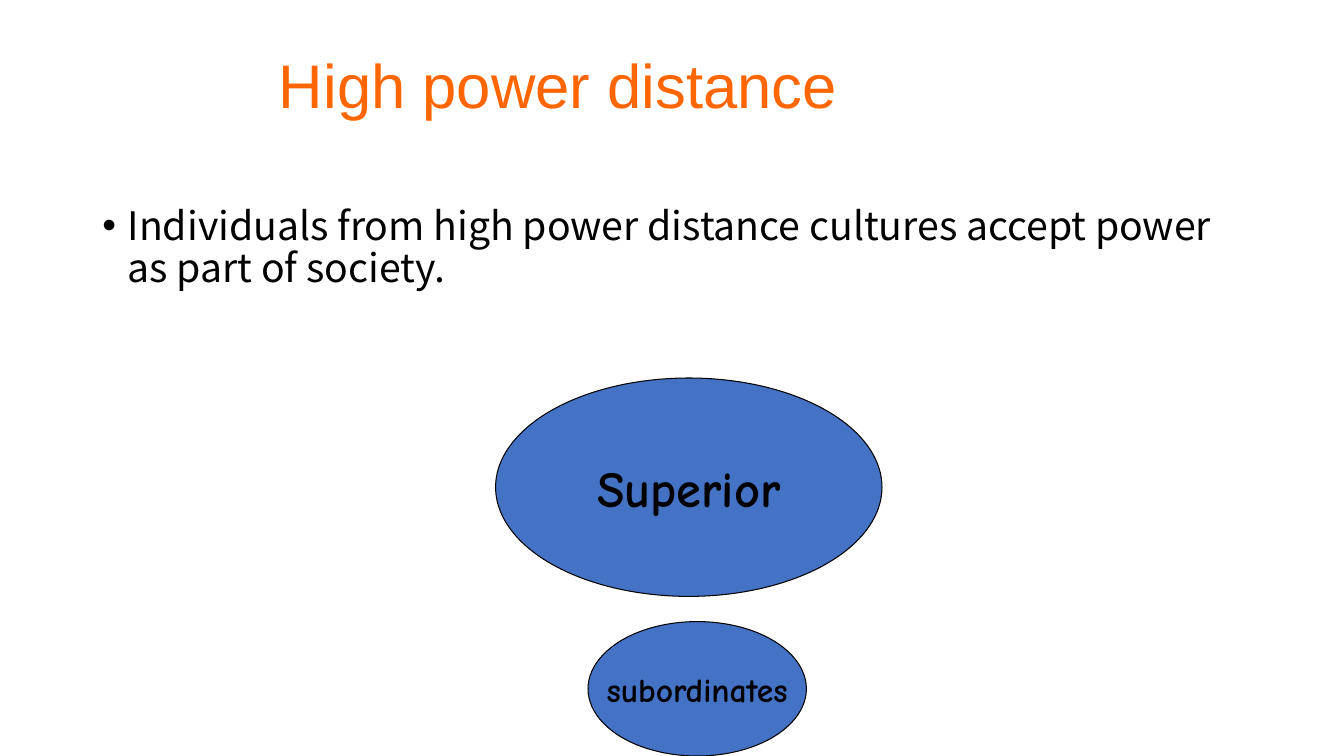
from dataclasses import dataclass

from pptx import Presentation
from pptx.dml.color import RGBColor
from pptx.enum.shapes import MSO_SHAPE as Shape
from pptx.enum.text import MSO_ANCHOR as Anchor, MSO_AUTO_SIZE as AutoSize, PP_ALIGN as Align
from pptx.util import Emu, Pt

PX = 9525  # EMU per px, 96 px to the inch
SLIDE_SIZE = (1280, 720)

TITLE = {"text": "High power distance", "at": (256, 0, 721, 168)}
BODY = {
    "text": "Individuals from high power distance cultures accept power as part of society.",
    "at": (88, 192, 1104, 457),
}
ROLES = [
    {"text": "Superior", "at": (472, 360, 368, 208), "size": 36},
    {"text": "subordinates", "at": (560, 592, 208, 128), "size": 24},
]


@dataclass(frozen=True)
class Theme:
    orange: RGBColor = RGBColor(0xFF, 0x66, 0x00)
    blue: RGBColor = RGBColor(0x44, 0x72, 0xC4)
    black: RGBColor = RGBColor(0, 0, 0)
    title_font: str = "Arial"
    body_font: str = "Noto Sans CJK SC"
    role_font: str = "Comic Neue"
    title_size: int = 44
    body_size: int = 28
    outline: float = 0.75


THEME = Theme()


def set_all(target, values):
    for name, value in values.items():
        setattr(target, name, value)


def px(*lengths):
    return [Emu(length * PX) for length in lengths]


def place(box, at):
    set_all(box, dict(zip(("left", "top", "width", "height"), px(*at))))


def write(box, text, color, font, frame_format, para_format):
    frame = box.text_frame
    set_all(frame, frame_format)
    para = frame.paragraphs[0]
    set_all(para, para_format)
    span = para.add_run()
    span.text = text
    set_all(span.font, font)
    span.font.color.rgb = color
    return para


def add_role(page, role):
    oval = page.shapes.add_shape(Shape.OVAL, *px(*role["at"]))
    oval.shadow.inherit = False
    oval.fill.solid()
    oval.fill.fore_color.rgb = THEME.blue
    oval.line.color.rgb = THEME.black
    oval.line.width = Pt(THEME.outline)
    write(oval, role["text"], THEME.black,
          {"name": THEME.role_font, "size": Pt(role["size"]), "bold": True},
          {"word_wrap": False, "vertical_anchor": Anchor.MIDDLE},
          {"alignment": Align.CENTER})


def main():
    deck = Presentation()
    deck.slide_width, deck.slide_height = px(*SLIDE_SIZE)
    page = deck.slides.add_slide(deck.slide_layouts[1])
    title, body = page.shapes.title, page.placeholders[1]

    place(title, TITLE["at"])
    write(title, TITLE["text"], THEME.orange,
          {"name": THEME.title_font, "size": Pt(THEME.title_size)},
          {"vertical_anchor": Anchor.MIDDLE, "auto_size": AutoSize.NONE},
          {"alignment": Align.LEFT, "line_spacing": 0.9})

    place(body, BODY["at"])
    para = write(body, BODY["text"], THEME.black,
                 {"name": THEME.body_font, "size": Pt(THEME.body_size)},
                 {"vertical_anchor": Anchor.TOP, "auto_size": AutoSize.NONE},
                 {"line_spacing": 0.9, "space_before": Pt(10)})
    indent = px(24)[0]
    set_all_xml = {"marL": indent, "indent": -indent}
    for name, value in set_all_xml.items():
        para._p.get_or_add_pPr().set(name, str(value))

    for role in ROLES:
        add_role(page, role)

    deck.save("out.pptx")


if __name__ == "__main__":
    main()
